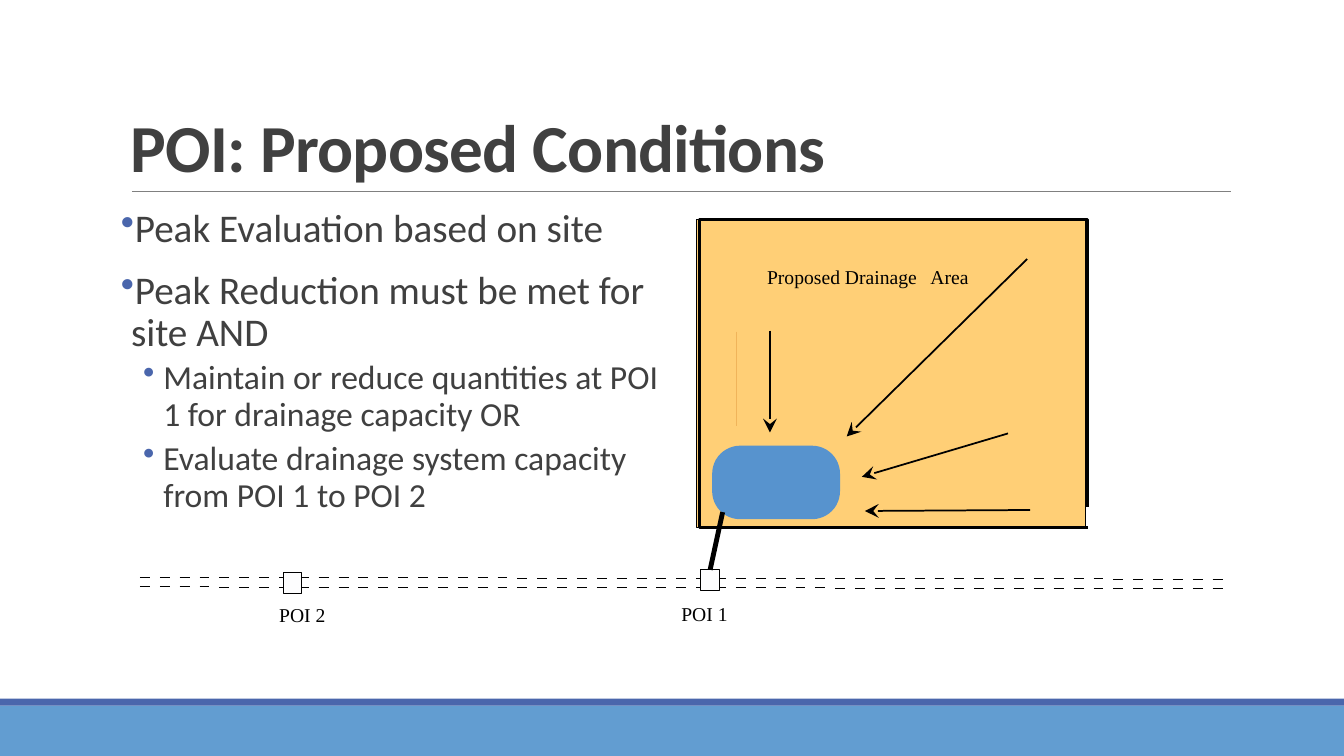
"""Builds a slide on points of interest under proposed drainage conditions."""
import pptx
import pptx.dml.color
import pptx.enum.shapes
import pptx.enum.text
import pptx.oxml
import pptx.oxml.ns
import pptx.util
from lxml import etree

Pt = pptx.util.Pt
RGB = pptx.dml.color.RGBColor
SHAPE = pptx.enum.shapes.MSO_SHAPE
ANCHOR = pptx.enum.text.MSO_ANCHOR
qn = pptx.oxml.ns.qn

BLACK = RGB(0x00, 0x00, 0x00)
GRAY = RGB(0x80, 0x80, 0x80)
DARK = RGB(0x40, 0x40, 0x40)
NAVY = RGB(0x4A, 0x66, 0xAC)
BLUE = RGB(0x62, 0x9D, 0xD1)
POND_BLUE = RGB(0x57, 0x93, 0xCE)
SAND = RGB(0xFF, 0xCF, 0x76)
DARK_SAND = RGB(0xF0, 0xB4, 0x5A)
OFF_WHITE = RGB(0xFD, 0xFD, 0xFE)

TITLE = "POI: Proposed Conditions"
BULLETS = [
    (0, "Peak Evaluation based on site"),
    (0, "Peak Reduction must be met for site AND"),
    (1, "Maintain or reduce quantities at POI 1 for drainage capacity OR"),
    (1, "Evaluate drainage system capacity from POI 1 to POI 2"),
]
LABELS = [
    ("Proposed Drainage", 547.9, 189.4, 120),
    ("Area", 664.6, 189.4, 30),
    ("POI 1", 486.7, 429.8, 42),
    ("POI 2", 199.4, 430.6, 42),
]
BODY_FORMATS = [
    dict(line_spacing=0.9, space_before=Pt(12), space_after=Pt(2)),
    dict(line_spacing=0.9, space_before=Pt(2), space_after=Pt(4)),
]
BODY_INDENTS = [(7.2, -7.2), (30.24, -14.4)]
BODY_FONTS = [dict(name="Calibri", size=Pt(28)), dict(name="Calibri", size=Pt(24))]
TITLE_FONT = dict(name="Calibri", size=Pt(48), bold=True)
LABEL_FONT = dict(name="Times New Roman", size=Pt(14))

BARS = [((0, 504, 960, 36), BLUE), ((0, 499, 960, 5), NAVY)]
SITE = (497.5, 157, 277.9, 219.6)
SITE_EDGE = [(777, 376.6), (499.5, 376.6), (499.5, 157), (777, 157), (777, 362.2)]
POND = (508.7, 318.4, 91.3, 52.5)
POI_1 = (500.4, 407, 13.7, 14.9)
POI_2 = (202.3, 409, 13, 14.9)
FLOWS = [
    ((733.7, 185), (604.8, 311.8)),
    ((720, 309.6), (615.6, 340.6)),
    ((735.8, 364.3), (617.8, 365)),
    ((550, 236.2), (550, 308.9)),
]
SEWER_TOPS = [419.2, 412.4]
SEWER_LEFT, SEWER_DROP = 100, 1.3
DASH_COUNT, DASH, PITCH = 55, 7.1, 14.19


def apply(target, formats):
    for name, value in formats.items():
        setattr(target, name, value)


def finish(sp, fill=None, line=None, width=0.75):
    sp.shadow.inherit = False
    if fill is None:
        sp.fill.background()
    else:
        sp.fill.solid()
        sp.fill.fore_color.rgb = fill
    if line is None:
        sp.line.fill.background()
    else:
        sp.line.color.rgb = line
        sp.line.width = Pt(width)
    return sp


def add_box(s, box, fill, line=None, width=0.75, kind=SHAPE.RECTANGLE):
    return finish(s.shapes.add_shape(kind, *map(Pt, box)), fill, line, width)


def add_line(s, start, end, color, width, arrow=False):
    cx = s.shapes.add_connector(
        pptx.enum.shapes.MSO_CONNECTOR.STRAIGHT, *map(Pt, start + end))
    cx.line.color.rgb = color
    cx.line.width = Pt(width)
    if arrow:
        etree.SubElement(cx.line._get_or_add_ln(), qn("a:tailEnd"),
                         type="stealth", w="lg", len="lg")
    etree.SubElement(cx._element.spPr, qn("a:effectLst"))
    return cx


def add_path(s, contours, width):
    points = [[(Pt(x), Pt(y)) for x, y in contour] for contour in contours]
    builder = s.shapes.build_freeform(*points[0][0])
    for i, contour in enumerate(points):
        if i:
            builder.move_to(*contour[0])
        builder.add_line_segments(contour[1:], close=False)
    finish(builder.convert_to_shape(), None, BLACK, width)


def add_frame(s, box, margins, wrap=True, anchor=ANCHOR.TOP):
    tf = s.shapes.add_textbox(*map(Pt, box)).text_frame
    sides = ("margin_left", "margin_top", "margin_right", "margin_bottom")
    apply(tf, dict(zip(sides, map(Pt, margins))))
    apply(tf, dict(word_wrap=wrap, vertical_anchor=anchor))
    return tf


def add_run(p, text, font, color):
    r = p.add_run()
    r.text = text
    apply(r.font, font)
    r.font.color.rgb = color
    return r


def add_bullet(p, indent):
    pPr = p._p.get_or_add_pPr()
    for name, value in zip(("marL", "indent"), indent):
        pPr.set(name, str(int(Pt(value))))
    color = etree.SubElement(pPr, qn("a:buClr"))
    etree.SubElement(color, qn("a:srgbClr"), val=str(NAVY))
    etree.SubElement(pPr, qn("a:buChar"), char="•")


def add_sewer(s, top):
    dashes = []
    for i in range(DASH_COUNT):
        x = SEWER_LEFT + i * PITCH
        y = top + SEWER_DROP * i / (DASH_COUNT - 1)
        dashes.append([(x, y), (x + DASH, y)])
    add_path(s, dashes, 0.63)


def add_diagram(s):
    add_box(s, SITE, SAND, BLACK)
    add_path(s, [SITE_EDGE], 2.38)
    for top in SEWER_TOPS:
        add_sewer(s, top)
    inlet = add_box(s, POI_1, OFF_WHITE, BLACK, 0.63)
    add_box(s, POI_2, OFF_WHITE, BLACK, 0.63)
    for text, left, top, width in LABELS:
        tf = add_frame(s, (left, top, width, 20.9), (0, 0, 0, 0), wrap=False)
        add_run(tf.paragraphs[0], text, LABEL_FONT, BLACK)
    pond = add_box(s, POND, POND_BLUE, kind=SHAPE.ROUNDED_RECTANGLE)
    pond.adjustments[0] = 0.38
    add_line(s, (525.6, 236.9), (525.6, 304.6), DARK_SAND, 0.25)
    for start, end in FLOWS:
        add_line(s, start, end, BLACK, 1.25, arrow=True)
    outlet = add_line(s, (516.2, 365.8), (507.2, 407), BLACK, 3.5)
    outlet.end_connect(inlet, 0)


def add_text(s):
    tf = add_frame(s, (86.4, 22.3, 792, 114.5), (7.2, 3.6, 7.2, 3.6), anchor=ANCHOR.BOTTOM)
    p = tf.paragraphs[0]
    p.line_spacing = 0.85
    r = add_run(p, TITLE, TITLE_FONT, DARK)
    r.font._element.set("spc", "-50")

    tf = add_frame(s, (86.4, 145.4, 394.6, 316.8), (0, 3.6, 0, 3.6))
    for i, (level, text) in enumerate(BULLETS):
        p = tf.add_paragraph() if i else tf.paragraphs[0]
        p.level = level
        apply(p, BODY_FORMATS[level])
        add_bullet(p, BODY_INDENTS[level])
        add_run(p, text, BODY_FONTS[level], DARK)


def main():
    prs = pptx.Presentation()
    apply(prs, dict(slide_width=Pt(960), slide_height=Pt(540)))
    s = prs.slides.add_slide(prs.slide_layouts[6])
    for box, fill in BARS:
        add_box(s, box, fill)
    add_line(s, (94.3, 136.8), (879.1, 136.8), GRAY, 0.5)
    add_diagram(s)
    add_text(s)
    prs.save("out.pptx")


if __name__ == "__main__":
    main()
